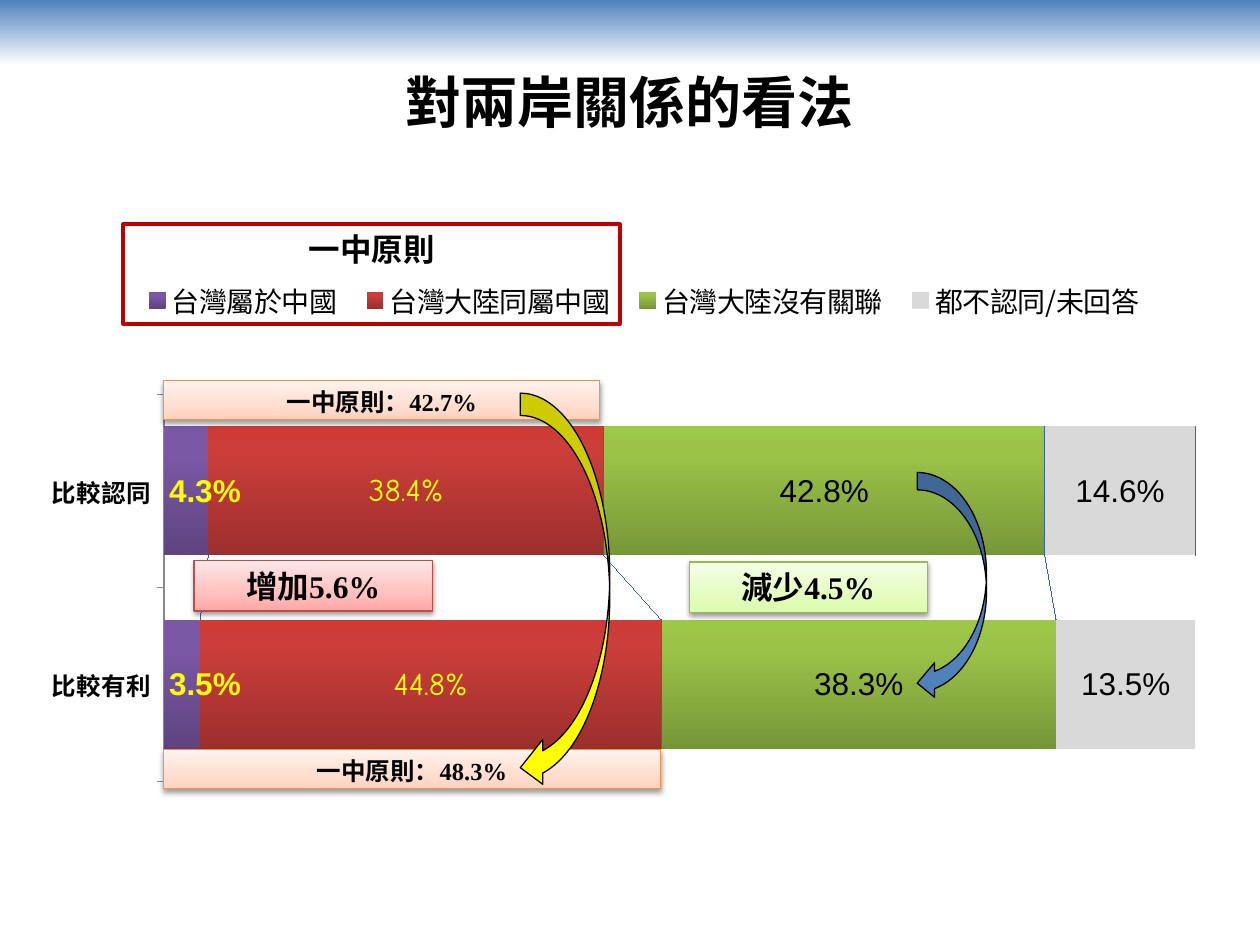
from lxml import etree
from pptx import Presentation
from pptx.chart.data import CategoryChartData
from pptx.dml.color import RGBColor
from pptx.enum import chart as ch, shapes, text
from pptx.oxml import parse_xml
from pptx.oxml.ns import nsdecls, qn
from pptx.util import Inches, Pt

CJK, SERIF, SANS, COMIC = "Noto Sans CJK SC", "Times New Roman", "Arial", "Comic Neue"
COLORS = {"black": "000000", "white": "FFFFFF", "blue": "4F81BD", "yellow": "FFFF00",
          "frame": "C00000", "gray": "D9D9D9", "axis": "878787", "link": "2A66A8",
          "orange_line": "F69240", "red_line": "BF4C48", "green_line": "98B955"}
# Gradients as (position in percent, colour), running upwards
GRADIENTS = {
    "purple": [(0, "5F4480"), (80, "7B58A6"), (100, "7C57A8")],
    "red": [(0, "9C2F2D"), (80, "CB3E3A"), (100, "CE3B37")],
    "green": [(0, "779737"), (80, "9BC348"), (100, "9DC746")],
    "pale_orange": [(0, "FFD2BD"), (35, "FFDED0"), (100, "FFF2ED")],
    "pale_red": [(0, "FFA6A5"), (35, "FFC0BF"), (100, "FFE7E7")],
    "pale_green": [(0, "DAFDA7"), (35, "E4FCC2"), (100, "F5FFE7")]}


def rgb(name):
    return RGBColor.from_string(COLORS[name])


def set_font(font, size, name, color="black", bold=False):
    font.size, font.bold = Pt(size), bold
    font.color.rgb = rgb(color)
    font.name = name
    ea = etree.SubElement(font._rPr, qn("a:ea"))
    ea.set("typeface", CJK)


def set_gradient(fill, parent, stops, angle=270):
    fill.solid()
    solid = parent.find(qn("a:solidFill"))
    gs = "".join(f'<a:gs pos="{pos * 1000}"><a:srgbClr val="{color}"/></a:gs>'
                 for pos, color in stops)
    solid.getparent().replace(solid, parse_xml(
        f'<a:gradFill {nsdecls("a")} rotWithShape="1"><a:gsLst>{gs}</a:gsLst>'
        f'<a:lin ang="{angle * 60000}" scaled="0"/></a:gradFill>'))


def add_shape(slide, kind, box, line=None, width=0.75):
    s = slide.shapes.add_shape(kind, *map(Inches, box))
    s.shadow.inherit = False
    if line:
        s.line.color.rgb, s.line.width = rgb(line), Pt(width)
    else:
        s.line.fill.background()
    return s


def write(s, wording, size, name):
    tf = s.text_frame
    tf.text = wording
    tf.word_wrap = True
    tf.vertical_anchor = text.MSO_ANCHOR.TOP
    p = tf.paragraphs[0]
    p.alignment = text.PP_ALIGN.CENTER
    set_font(p.runs[0].font, size, name, bold=True)


def add_band(slide, box):
    s = add_shape(slide, shapes.MSO_SHAPE.RECTANGLE, box)
    set_gradient(s.fill, s._element.spPr,
                 [(0, COLORS["blue"]), (100, COLORS["white"])], 90)


def add_title(slide, box):
    s = slide.shapes.title
    s.left, s.top, s.width, s.height = map(Inches, box)
    write(s, "對兩岸關係的看法", 32, CJK)
    s.text_frame.vertical_anchor = text.MSO_ANCHOR.MIDDLE


def add_frame(slide, box):
    s = add_shape(slide, shapes.MSO_SHAPE.RECTANGLE, box, "frame", 2.25)
    s.fill.background()
    write(s, "一中原則", 18, CJK)


def add_callout(slide, box, wording, size, tone):
    s = add_shape(slide, shapes.MSO_SHAPE.RECTANGLE, box, tone + "_line")
    spPr = s._element.spPr
    set_gradient(s.fill, spPr, GRADIENTS["pale_" + tone])
    effects = spPr.find(qn("a:effectLst"))
    effects.append(parse_xml(
        f'<a:outerShdw {nsdecls("a")} blurRad="{Pt(3.1)}" dist="{Pt(1.6)}" dir="5400000" '
        f'rotWithShape="0"><a:srgbClr val="{COLORS["black"]}"><a:alpha val="38000"/>'
        '</a:srgbClr></a:outerShdw>'))
    write(s, wording, size, SERIF)


def add_arrow(slide, box, color):
    s = add_shape(slide, shapes.MSO_SHAPE.CURVED_RIGHT_ARROW, box, "black")
    s.fill.solid()
    s.fill.fore_color.rgb = rgb(color)
    s._element.spPr.find(qn("a:xfrm")).set("flipH", "1")


def layout_xml(x, y, w, h, inner=False):
    target = '<c:layoutTarget val="inner"/>' if inner else ""
    return parse_xml(
        f'<c:layout {nsdecls("c")}><c:manualLayout>{target}<c:xMode val="edge"/>'
        f'<c:yMode val="edge"/><c:x val="{x}"/><c:y val="{y}"/><c:w val="{w}"/>'
        f'<c:h val="{h}"/></c:manualLayout></c:layout>')


def set_layout(element, layout, index):
    for old in element.findall(qn("c:layout")):
        element.remove(old)
    element.insert(index, layout)


def add_opinion_chart(slide, box):
    # name, values, fill, label colour, label font
    rows = [("台灣屬於中國", (0.043, 0.035), "purple", "yellow", SANS),
            ("台灣大陸同屬中國", (0.384, 0.448), "red", "yellow", COMIC),
            ("台灣大陸沒有關聯", (0.428, 0.383), "green", "black", SANS),
            ("都不認同/未回答", (0.146, 0.135), "gray", "black", SANS)]
    data = CategoryChartData(number_format="0.0%")
    data.categories = ["比較認同", "比較有利"]
    for name, values, *_ in rows:
        data.add_series(name, values)
    chart = slide.shapes.add_chart(ch.XL_CHART_TYPE.BAR_STACKED_100,
                                   *map(Inches, box), data).chart
    set_font(chart.font, 18, SANS)
    chart.has_title = False

    # Bars and value labels
    plot = chart.plots[0]
    plot.gap_width, plot.overlap, plot.vary_by_categories = 50, 100, False
    for i, (series, (_, _, tone, color, font)) in enumerate(zip(plot.series, rows)):
        fill = series.format.fill
        if tone in GRADIENTS:
            set_gradient(fill, series._element.get_or_add_spPr(), GRADIENTS[tone])
        else:
            fill.solid()
            fill.fore_color.rgb = rgb(tone)
        series.invert_if_negative = False
        labels = series.data_labels
        labels.show_value = True
        labels.number_format, labels.number_format_is_linked = "0.0%", False
        set_font(labels.font, 18, font, color, bold=i == 0)
        labels.position = (ch.XL_LABEL_POSITION.INSIDE_BASE if i == 0
                           else ch.XL_LABEL_POSITION.CENTER)

    # Lines joining the series
    plot._element.find(qn("c:overlap")).addnext(parse_xml(
        f'<c:serLines {nsdecls("c", "a")}><c:spPr><a:ln w="{Pt(0.75)}"><a:solidFill>'
        f'<a:srgbClr val="{COLORS["link"]}"/></a:solidFill></a:ln></c:spPr></c:serLines>'))

    # Axes
    axis = chart.category_axis
    axis.reverse_order = True
    axis.major_tick_mark = ch.XL_TICK_MARK.OUTSIDE
    axis.format.line.color.rgb = rgb("axis")
    set_font(axis.tick_labels.font, 14, CJK, bold=True)
    chart.value_axis.has_major_gridlines = False
    chart.value_axis.visible = False

    # Legend and plot area
    chart.has_legend = True
    legend = chart.legend
    legend.position = ch.XL_LEGEND_POSITION.TOP
    legend.include_in_layout = False
    set_font(legend.font, 16, CJK)
    set_layout(legend._element, layout_xml(0.08, 0.02, 0.88, 0.08), 1)
    area = chart._chartSpace.chart.plotArea
    set_layout(area, layout_xml(0.11, 0.218, 0.881, 0.651, True), 0)


def main():
    prs = Presentation()
    prs.slide_width, prs.slide_height = Inches(10), Inches(7.5)
    slide = prs.slides.add_slide(prs.slide_layouts[5])
    add_band(slide, (0, 0, 10, 0.52))
    add_title(slide, (0.5, 0.3, 9, 1.01))
    add_opinion_chart(slide, (0.28, 2.1, 9.29, 4.72))
    add_frame(slide, (0.98, 1.78, 3.94, 0.79))
    # Changes and totals
    add_callout(slide, (5.47, 4.46, 1.89, 0.4), "減少4.5%", 18, "green")
    add_arrow(slide, (7.28, 3.75, 0.55, 1.81), "blue")
    add_callout(slide, (1.3, 3.02, 3.46, 0.31), "一中原則：42.7%", 14, "orange")
    add_callout(slide, (1.3, 5.95, 3.94, 0.31), "一中原則：48.3%", 14, "orange")
    add_arrow(slide, (4.13, 3.12, 0.71, 3.15), "yellow")
    add_callout(slide, (1.54, 4.45, 1.89, 0.4), "增加5.6%", 18, "red")
    prs.save("out.pptx")


if __name__ == "__main__":
    main()
